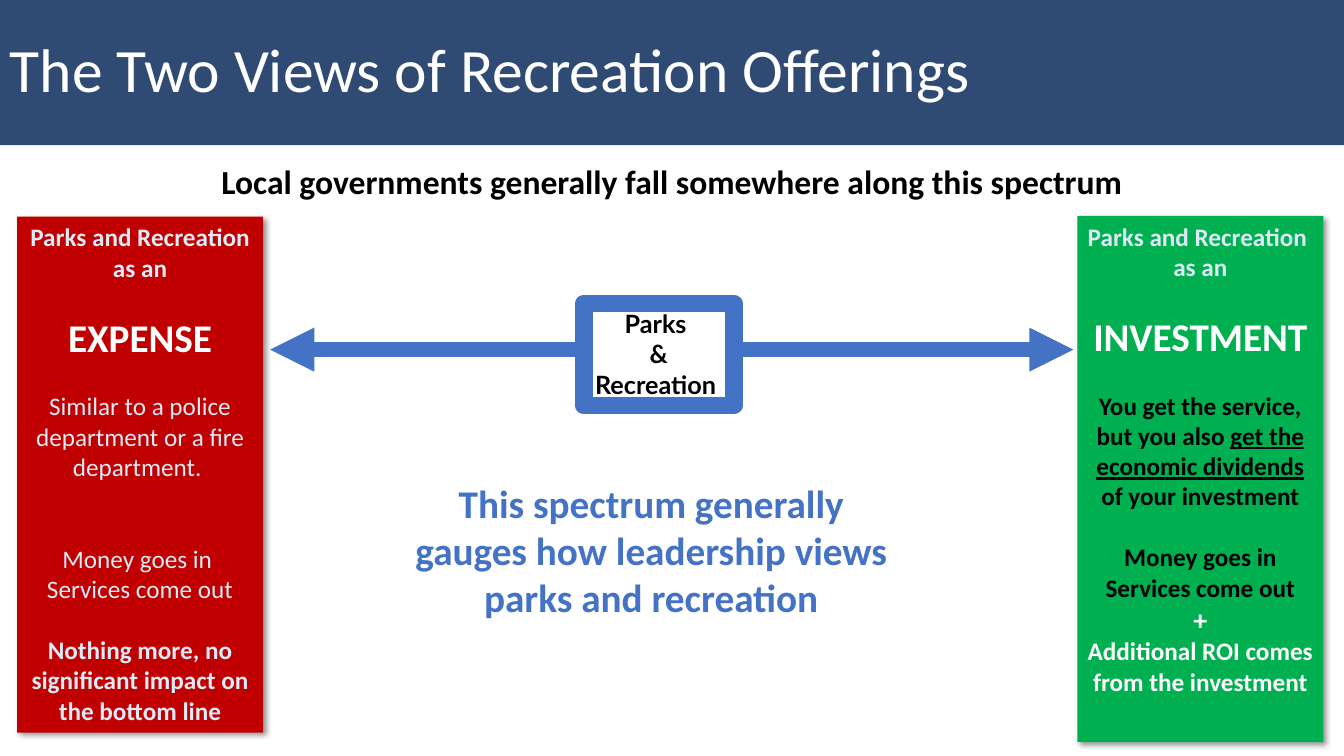
from lxml import etree
from pptx import Presentation
from pptx.dml.color import RGBColor
from pptx.enum.shapes import MSO_CONNECTOR, MSO_SHAPE
from pptx.enum.text import MSO_ANCHOR, PP_ALIGN
from pptx.oxml.ns import qn
from pptx.util import Cm, Pt

RECT, LINE = MSO_SHAPE.RECTANGLE, MSO_CONNECTOR.STRAIGHT
TOP, MIDDLE = MSO_ANCHOR.TOP, MSO_ANCHOR.MIDDLE
LEFT, CENTER = PP_ALIGN.LEFT, PP_ALIGN.CENTER

COLORS = {
    "navy": "304B73", "blue": "4472C4", "red": "C00000", "green": "00B050",
    "pale": "DEEBF7", "white": "FFFFFF", "black": "000000",
}
GAP = 22  # points in one line of 18 pt text

TITLE = "The Two Views of Recreation Offerings"
CLAIM = "Local governments generally fall somewhere along this spectrum"
NOTE = "This spectrum generally gauges how leadership views parks and recreation"
HUB = ["Parks ", "&", "Recreation "]

# Each panel: left, top, height, fill, then (text, format) per paragraph.
# A text given as a list holds (words, underlined) pairs.
PANELS = [
    (0.43, 5.46, 13.0, "red", [
        ("Parks and Recreation as an", {}),
        ("EXPENSE", {"size": 28, "color": "white", "before": GAP}),
        ("Similar to a police department or a fire department. ",
         {"bold": False, "before": GAP}),
        ("Money goes in ", {"bold": False, "before": 2 * GAP}),
        ("Services come out", {"bold": False}),
        ("Nothing more, no significant impact on the bottom line",
         {"before": GAP}),
    ]),
    (27.15, 5.44, 13.26, "green", [
        ("Parks and Recreation ", {}),
        ("as an", {}),
        ("INVESTMENT", {"size": 28, "color": "white", "before": GAP}),
        ([("You get the service, but you also ", False),
          ("get the economic dividends ", True),
          ("of your investment", False)],
         {"color": "black", "before": GAP}),
        ("Money goes in", {"color": "black", "before": GAP}),
        ("Services come out", {"color": "black"}),
        ("+", {"size": 20, "color": "white"}),
        ("Additional ROI comes from the investment", {"color": "white"}),
    ]),
]
PANEL_W = 6.2


def rgb(name):
    return RGBColor.from_string(COLORS[name])


def write(frame, text, size=18, color="pale", bold=True, face="Calibri",
          align=CENTER, before=0, lines=None):
    """Add one paragraph, using the empty first one if it is free."""
    para = frame.paragraphs[0]
    if para.runs:
        para = frame.add_paragraph()
    para.alignment = align
    if before:
        para.space_before = Pt(before)
    if lines:
        para.line_spacing = lines
    for words, under in [(text, False)] if isinstance(text, str) else text:
        run = para.add_run()
        run.text = words
        font = run.font
        font.name, font.size, font.bold = face, Pt(size), bold
        font.underline = under
        font.color.rgb = rgb(color)


def box(left, top, width, height, fill, anchor=TOP):
    shape = slide.shapes.add_shape(RECT, Cm(left), Cm(top), Cm(width), Cm(height))
    shape.shadow.inherit = False
    shape.fill.solid()
    shape.fill.fore_color.rgb = rgb(fill)
    shape.line.fill.background()
    shape.text_frame.word_wrap = True
    shape.text_frame.vertical_anchor = anchor
    return shape


def label(left, top, width, height, text, **style):
    frame = slide.shapes.add_textbox(
        Cm(left), Cm(top), Cm(width), Cm(height)).text_frame
    frame.word_wrap = True
    write(frame, text, **style)


def add(parent, tag, **attrs):
    return etree.SubElement(parent, qn(tag), attrs)


def stroke(shape, color, width):
    shape.line.color.rgb = rgb(color)
    shape.line.width = Pt(width)
    return shape.element.spPr.find(qn("a:ln"))


def shade(shape):
    effects = shape.element.spPr.find(qn("a:effectLst"))
    outer = add(effects, "a:outerShdw", blurRad=str(Pt(4)), dist=str(Pt(3)),
                dir="2700000", algn="tl", rotWithShape="0")
    add(add(outer, "a:srgbClr", val=COLORS["black"]), "a:alpha", val="40000")


prs = Presentation()
prs.slide_width, prs.slide_height = Cm(33.87), Cm(19.05)
slide = prs.slides.add_slide(prs.slide_layouts[6])

banner = box(0, 0, 33.87, 3.66, "navy", MIDDLE)
write(banner.text_frame, TITLE, size=44, color="white", bold=False,
      align=LEFT, lines=0.9)

arrow = slide.shapes.add_connector(LINE, Cm(6.81), Cm(8.81), Cm(27.05), Cm(8.81))
ends = stroke(arrow, "blue", 10.5)
for tag in ("a:headEnd", "a:tailEnd"):
    add(ends, tag, type="triangle")
add(arrow.element.spPr, "a:effectLst")

label(1.02, 3.94, 31.83, 1.27, CLAIM, size=24, color="black")

hub = box(14.71, 7.65, 3.78, 2.57, "white")
add(stroke(hub, "blue", 12.75), "a:round")
for text in HUB:
    write(hub.text_frame, text, color="black", face="Lato")

for left, top, height, fill, paras in PANELS:
    panel = box(left, top, PANEL_W, height, fill)
    shade(panel)
    for text, style in paras:
        write(panel.text_frame, text, **style)

label(10.01, 11.96, 12.8, 3.84, NOTE, size=28, color="blue")

prs.save("out.pptx")
